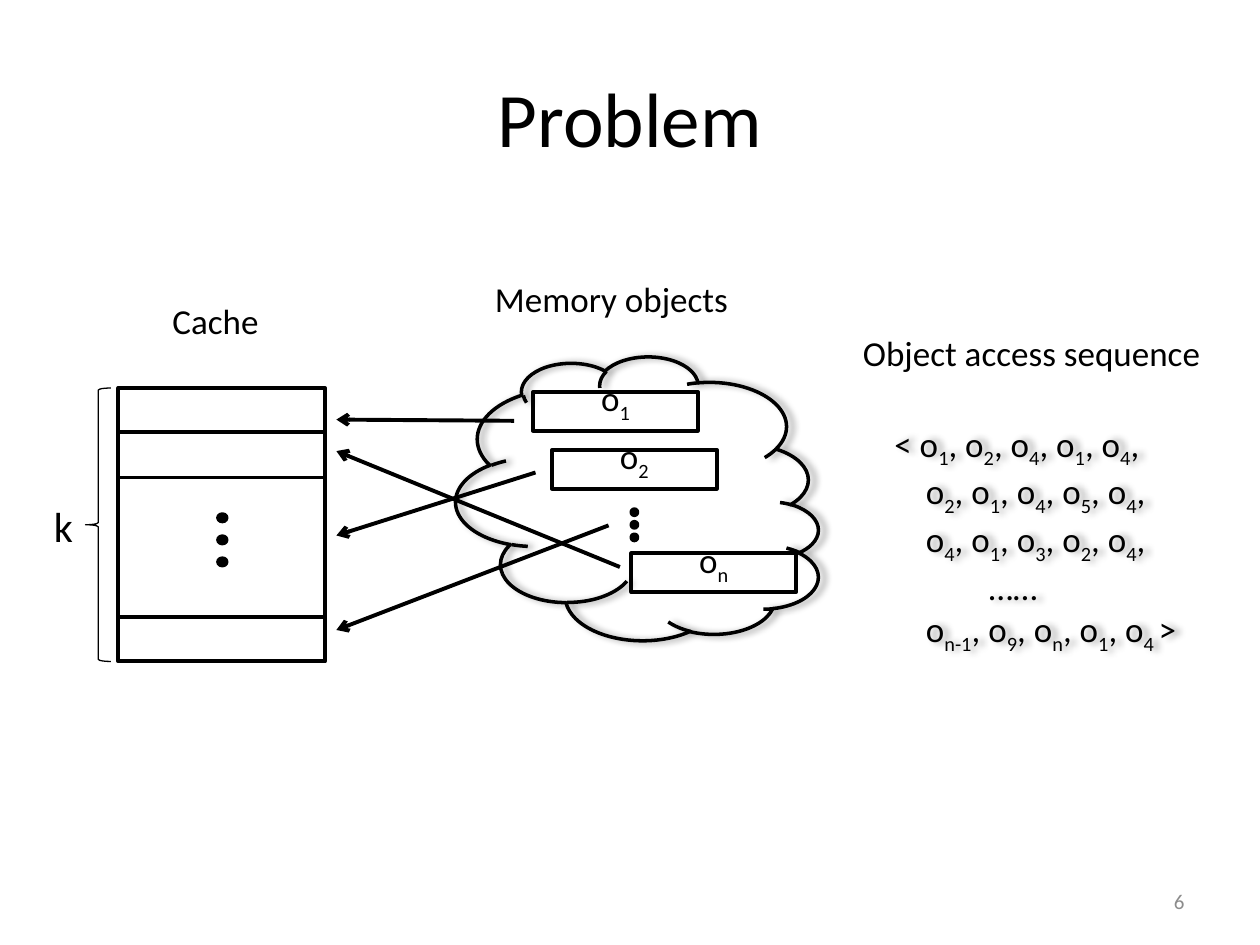
from lxml.etree import SubElement
from pptx import Presentation
from pptx.dml.color import RGBColor
from pptx.enum.shapes import MSO_CONNECTOR, MSO_SHAPE
from pptx.enum.text import MSO_ANCHOR, MSO_AUTO_SIZE, PP_ALIGN
from pptx.oxml.ns import qn
from pptx.util import Inches, Pt

COLORS = {"ink": "000000", "number": "8C8C8C"}


class Sketch:
    """Holds the text and line style and the page being drawn."""

    font = "Calibri"
    text_size = 20
    line_width = 2

    def __init__(self, page):
        self.page = page

    def color(self, name):
        return RGBColor.from_string(COLORS[name])

    def add_spans(self, paragraph, markup, size=None, color="ink"):
        """Add runs; every second piece between bars is a subscript."""
        for index, piece in enumerate(markup.split("|")):
            if not piece:
                continue
            span = paragraph.add_run()
            span.text = piece
            span.font.name = self.font
            span.font.size = Pt(size or self.text_size)
            span.font.color.rgb = self.color(color)
            if index % 2:
                span.font._element.set("baseline", "-25000")

    def text(self, frame, lines, size=None, color="ink", align=PP_ALIGN.LEFT,
             anchor=MSO_ANCHOR.TOP, wrap=False):
        """Add a text box; lines are pairs of left indent and markup."""
        box = self.page.shapes.add_textbox(*map(Inches, frame))
        text_frame = box.text_frame
        text_frame.word_wrap = wrap
        text_frame.auto_size = MSO_AUTO_SIZE.NONE if wrap else MSO_AUTO_SIZE.SHAPE_TO_FIT_TEXT
        text_frame.vertical_anchor = anchor
        for index, (indent, markup) in enumerate(lines):
            paragraph = text_frame.add_paragraph() if index else text_frame.paragraphs[0]
            paragraph.alignment = align
            if indent:
                paragraph._p.get_or_add_pPr().set("marL", str(Inches(indent)))
            self.add_spans(paragraph, markup, size, color)
        return box

    def outline(self, kind, frame, width=None):
        shape = self.page.shapes.add_shape(kind, *map(Inches, frame))
        shape.shadow.inherit = False
        shape.fill.background()
        shape.line.color.rgb = self.color("ink")
        shape.line.width = Pt(width or self.line_width)
        return shape

    def memory_object(self, left, top, markup):
        shape = self.outline(MSO_SHAPE.RECTANGLE, (left, top, 1.31, 0.31))
        shape.text_frame.vertical_anchor = MSO_ANCHOR.BOTTOM
        paragraph = shape.text_frame.paragraphs[0]
        paragraph.alignment = PP_ALIGN.CENTER
        self.add_spans(paragraph, markup)

    def dots(self, left, top, step, width, height):
        for index in range(3):
            frame = (left, top + index * step, width, height)
            dot = self.outline(MSO_SHAPE.FLOWCHART_CONNECTOR, frame)
            dot.fill.solid()
            dot.fill.fore_color.rgb = self.color("ink")

    def line(self, start, end, arrow=False):
        connector = self.page.shapes.add_connector(
            MSO_CONNECTOR.STRAIGHT, *map(Inches, start + end))
        connector.line.color.rgb = self.color("ink")
        connector.line.width = Pt(2.25)
        if arrow:
            SubElement(connector.line._get_or_add_ln(), qn("a:tailEnd"), type="arrow")
        SubElement(connector._element.spPr, qn("a:effectLst"))

    def cast_shadow(self, shape):
        shape.shadow.inherit = False
        effects = shape._element.spPr.find(qn("a:effectLst"))
        shadow = SubElement(effects, qn("a:outerShdw"), blurRad=str(Pt(4)),
                            dist=str(Pt(3)), dir="0", rotWithShape="0")
        tint = SubElement(shadow, qn("a:srgbClr"), val=COLORS["ink"])
        SubElement(tint, qn("a:alpha"), val="40000")


def draw_cache(sketch):
    left, top, width, height = 0.94, 3.08, 1.64, 2.17
    sketch.text((1.27, 2.33, 0.89, 0.44), [(0, "Cache")])
    sketch.outline(MSO_SHAPE.RECTANGLE, (left, top, width, height), 2.25)
    for y in (3.43, 3.79, 4.9):
        sketch.line((left, y), (left + width, y))
    sketch.text((0.33, 3.92, 0.28, 0.35), [(0, "k")], size=24)
    sketch.outline(MSO_SHAPE.LEFT_BRACE, (0.68, top, 0.2, height), 0.75)
    sketch.dots(1.73, 4.08, 0.175, 0.07, 0.06)


def draw_memory(sketch):
    for left, top, markup in ((4.23, 3.11, "o|1"), (4.38, 3.57, "o|2"), (5.01, 4.39, "o|n")):
        sketch.memory_object(left, top, markup)
    sketch.dots(5.01, 4.04, 0.1, 0.05, 0.05)
    cloud = sketch.outline(MSO_SHAPE.CLOUD, (3.94, 2.52, 2.25, 2.88))
    cloud.rotation = 90
    sketch.cast_shadow(cloud)
    sketch.text((3.83, 2.15, 2.11, 0.44), [(0, "Memory objects")])


def draw_sequence(sketch):
    sketch.text((6.75, 2.58, 2.91, 0.44), [(0, "Object access sequence")])
    sequence = sketch.text((7, 3.3, 2.54, 1.78), [
        (0, "< o|1|, o|2|, o|4|, o|1|, o|4|,"),
        (0.25, "o|2|, o|1|, o|4|, o|5|, o|4|,"),
        (0.25, "o|4|, o|1|, o|3|, o|2|, o|4|,"),
        (0.75, "……"),
        (0.25, "o|n-1|, o|9|, o|n|, o|1|, o|4 |>"),
    ])
    sketch.cast_shadow(sequence)


def main():
    deck = Presentation()
    deck.slide_width, deck.slide_height = Inches(10), Inches(7.5)
    sketch = Sketch(deck.slides.add_slide(deck.slide_layouts[6]))

    sketch.text((0.5, 0.3, 9, 1.25), [(0, "Problem")], size=44,
                align=PP_ALIGN.CENTER, anchor=MSO_ANCHOR.MIDDLE, wrap=True)
    sketch.text((7.17, 6.95, 2.33, 0.4), [(0, "6")], size=12, color="number",
                align=PP_ALIGN.RIGHT, anchor=MSO_ANCHOR.MIDDLE, wrap=True)
    draw_cache(sketch)
    draw_memory(sketch)
    draw_sequence(sketch)

    cache_edge = 2.67
    for start, slot_y in (((4.08, 3.34), 3.33), ((4.25, 3.75), 4.25),
                          ((4.92, 4.5), 3.58), ((4.83, 4.17), 5)):
        sketch.line(start, (cache_edge, slot_y), arrow=True)

    deck.save("out.pptx")


if __name__ == "__main__":
    main()
